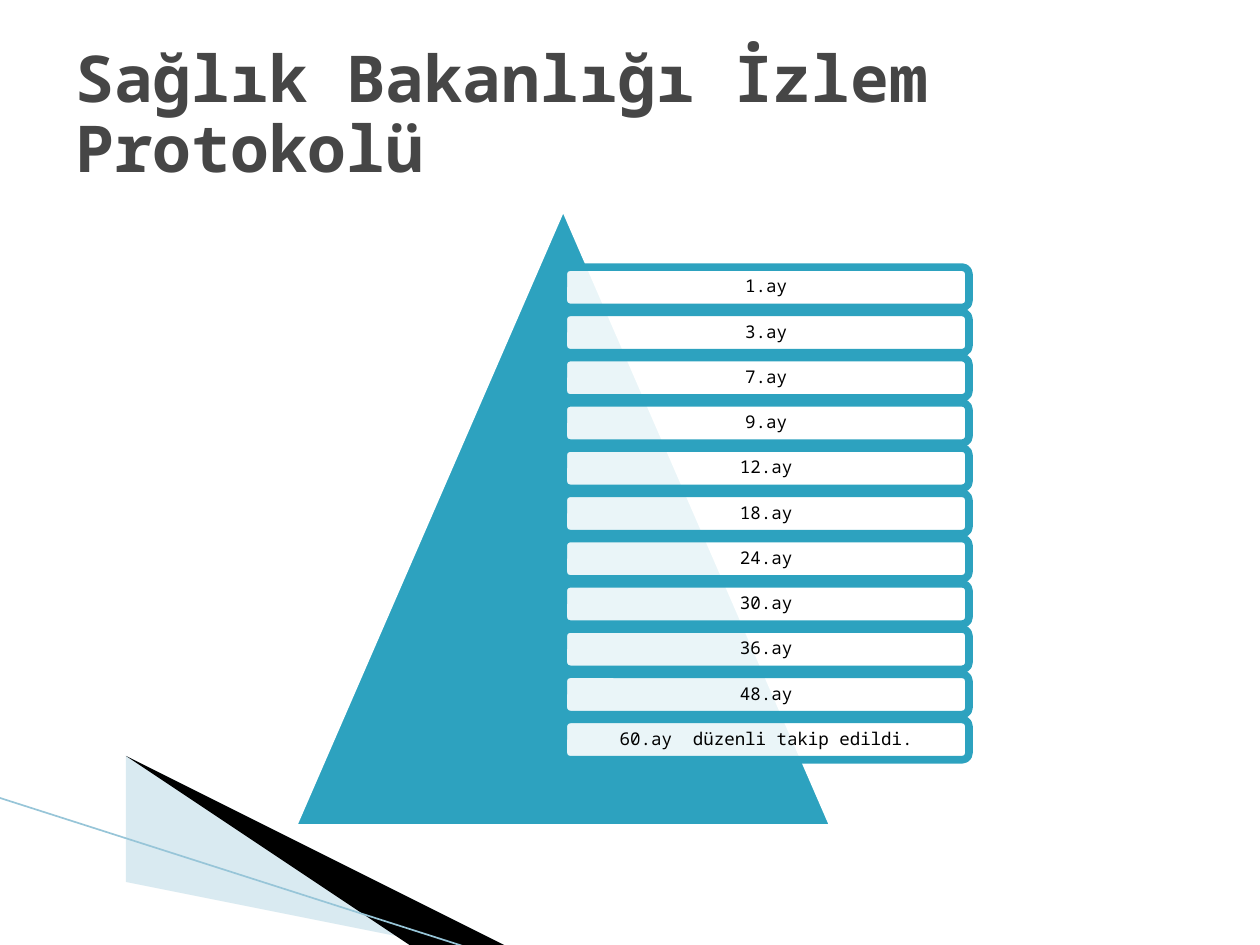
from dataclasses import dataclass

import lxml.etree
import pptx
import pptx.dml.color
import pptx.enum.shapes
import pptx.enum.text
import pptx.oxml.ns
import pptx.util

Inches = pptx.util.Inches
Pt = pptx.util.Pt
SHAPE = pptx.enum.shapes.MSO_SHAPE
qn = pptx.oxml.ns.qn


@dataclass(frozen=True)
class Theme:
    font: str = "Noto Sans Mono"
    teal: str = "2DA2BF"
    white: str = "FFFFFF"
    black: str = "000000"
    title: str = "464646"
    pale_wave: str = "A0CBDC"
    wave_edge: str = "97C5D8"
    title_size: float = 36.9
    label_size: float = 10
    border: float = 4.33
    thin: float = 0.95


THEME = Theme()
VISITS = ["1.ay", "3.ay", "7.ay", "9.ay", "12.ay", "18.ay", "24.ay", "30.ay",
          "36.ay", "48.ay", "60.ay  düzenli takip edildi."]
FIRST_TOP, LAST_TOP = 2.12, 5.71


def rgb(value):
    return pptx.dml.color.RGBColor.from_string(value)


def set_fill(shape, color, opacity=100):
    shape.shadow.inherit = False
    shape.fill.solid()
    shape.fill.fore_color.rgb = rgb(color)
    if opacity < 100:
        srgb = shape._element.spPr.find(f"{qn('a:solidFill')}/{qn('a:srgbClr')}")
        lxml.etree.SubElement(srgb, qn("a:alpha"), val=str(opacity * 1000))


def set_line(shape, color, width):
    shape.line.color.rgb = rgb(color)
    shape.line.width = Pt(width)


def write_text(frame, text, size, color, bold=False):
    frame.word_wrap = True
    frame.vertical_anchor = pptx.enum.text.MSO_ANCHOR.MIDDLE
    paragraph = frame.paragraphs[0]
    paragraph.text = text
    paragraph.line_spacing = 0.9
    font = paragraph.runs[0].font
    font.name, font.size, font.bold = THEME.font, Pt(size), bold
    font.color.rgb = rgb(color)
    return paragraph


def add_wave(slide, points, color, opacity=100):
    builder = slide.shapes.build_freeform(*points[0], scale=Inches(1))
    builder.add_line_segments(points[1:], close=True)
    wave = builder.convert_to_shape()
    set_fill(wave, color, opacity)
    wave.line.fill.background()


def add_wave_edge(slide):
    edge = slide.shapes.add_connector(
        pptx.enum.shapes.MSO_CONNECTOR.STRAIGHT,
        Inches(-0.01), Inches(6.33), Inches(3.71), Inches(7.52))
    set_line(edge, THEME.wave_edge, THEME.thin)
    lxml.etree.SubElement(edge._element.spPr, qn("a:effectLst"))


def add_pyramid(slide):
    pyramid = slide.shapes.add_shape(
        SHAPE.ISOSCELES_TRIANGLE, Inches(2.32), Inches(1.62), Inches(4.3), Inches(4.95))
    set_fill(pyramid, THEME.teal)
    set_line(pyramid, THEME.white, THEME.border)


def add_visit(slide, top, text):
    visit = slide.shapes.add_shape(
        SHAPE.ROUNDED_RECTANGLE, Inches(4.47), Inches(top), Inches(3.22), Inches(0.32))
    set_fill(visit, THEME.white, opacity=90)
    set_line(visit, THEME.teal, THEME.border)
    frame = visit.text_frame
    frame.margin_left = frame.margin_right = Inches(0.04)
    frame.margin_top = frame.margin_bottom = Inches(0.04)
    label = write_text(frame, text, THEME.label_size, THEME.black)
    label.alignment = pptx.enum.text.PP_ALIGN.CENTER


def add_title(slide, text):
    title = slide.shapes.add_textbox(Inches(0.5), Inches(0.3), Inches(9), Inches(1.25))
    write_text(title.text_frame, text, THEME.title_size, THEME.title, bold=True)


def main():
    deck = pptx.Presentation()
    deck.slide_width, deck.slide_height = Inches(10), Inches(7.5)
    slide = deck.slides.add_slide(deck.slide_layouts[6])

    add_wave(slide, [(0.55, 6.51), (5.95, 7.51), (4.56, 7.51), (0.55, 6.5)],
             THEME.pale_wave, opacity=40)
    add_wave(slide, [(0.53, 6.49), (4.57, 7.51), (3.72, 7.52), (0.54, 6.5)], THEME.black)
    add_wave_edge(slide)

    add_pyramid(slide)
    pitch = (LAST_TOP - FIRST_TOP) / (len(VISITS) - 1)
    for row, visit in enumerate(VISITS):
        add_visit(slide, FIRST_TOP + row * pitch, visit)

    add_title(slide, "Sağlık Bakanlığı İzlem Protokolü")
    deck.save("out.pptx")


if __name__ == "__main__":
    main()
